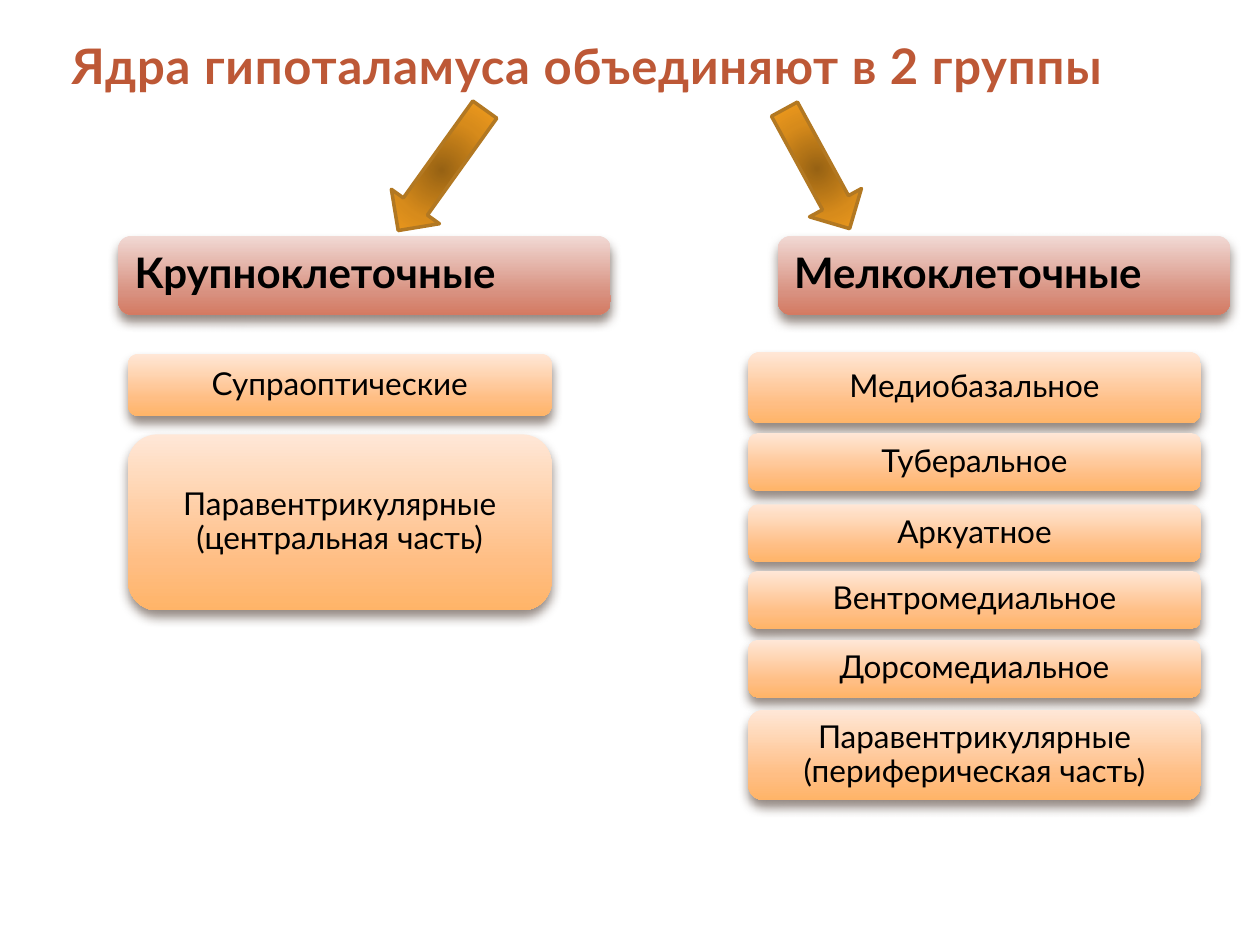
import copy
from dataclasses import dataclass

import pptx
import pptx.dml.color
import pptx.enum.shapes
import pptx.enum.text
import pptx.oxml
import pptx.oxml.ns
import pptx.util

Pt = pptx.util.Pt
RGB = pptx.dml.color.RGBColor
Kind = pptx.enum.shapes.MSO_SHAPE
Align = pptx.enum.text.PP_ALIGN
Anchor = pptx.enum.text.MSO_ANCHOR

FONT = "Lato"
BLACK = RGB(0x00, 0x00, 0x00)
RUST = RGB(0xBD, 0x58, 0x36)
BROWN = RGB(0xB2, 0x78, 0x22)
SHADE = RGB(0x4E, 0x3B, 0x30)
GOLD = ((0, RGB(0x97, 0x62, 0x13)), (0.5, RGB(0xD7, 0x8B, 0x1B)), (1, RGB(0xFF, 0xA5, 0x1F)))
ROSE = ((0, RGB(0xF1, 0xD9, 0xD4)), (0.72, RGB(0xD8, 0x91, 0x80)), (1, RGB(0xD4, 0x7A, 0x62)))
PEACH = ((0, RGB(0xFF, 0xE7, 0xD7)), (0.72, RGB(0xFF, 0xBE, 0x84)), (1, RGB(0xFF, 0xB4, 0x68)))

XMLNS = pptx.oxml.ns.nsdecls("a")
ROUND = (
    f'<a:path {XMLNS} path="circle">'
    '<a:fillToRect l="50000" t="50000" r="50000" b="50000"/></a:path>'
)
GLOW = (
    f'<a:effectLst {XMLNS}><a:outerShdw blurRad="{Pt(6)}" dist="{Pt(4)}" dir="5400000" '
    f'rotWithShape="0"><a:srgbClr val="{SHADE}"><a:alpha val="60000"/></a:srgbClr>'
    "</a:outerShdw></a:effectLst>"
)


@dataclass
class Arrow:
    left: float
    top: float
    width: float
    height: float
    turn: float


@dataclass
class Box:
    text: str
    top: float
    height: float


@dataclass
class Group:
    head: str
    edge: float
    span: float
    left: float
    width: float
    rows: list[Box]


ARROWS = [
    Arrow(450, 57.6, 33.8, 77.8, 331.4),
    Arrow(235.4, 54.7, 33.8, 85, 35.6),
]
GROUPS = [
    Group("Крупноклеточные", 67.6, 281.4, 73.2, 242, [
        Box("Супраоптические", 202.2, 35.5),
        Box("Паравентрикулярные (центральная часть)", 248.2, 100.6),
    ]),
    Group("Мелкоклеточные", 444.5, 258.5, 427.6, 258.6, [
        Box("Медиобазальное", 201, 41),
        Box("Туберальное", 247.5, 33),
        Box("Аркуатное", 288.2, 33),
        Box("Вентромедиальное", 326.2, 33),
        Box("Дорсомедиальное", 365.6, 33),
        Box("Паравентрикулярные (периферическая часть)", 405.6, 51.6),
    ]),
]


def write(frame, text: str, *, size: float, color=BLACK, bold=False, align=Align.LEFT,
          anchor=Anchor.MIDDLE, side=7.2, edge=3.6, line=0.9, track=0) -> None:
    frame.word_wrap = True
    frame.vertical_anchor = anchor
    frame.margin_left = frame.margin_right = Pt(side)
    frame.margin_top = frame.margin_bottom = Pt(edge)
    para = frame.paragraphs[0]
    para.alignment = align
    para.line_spacing = line
    run = para.add_run()
    run.text = text
    run.font.name = FONT
    run.font.size = Pt(size)
    run.font.bold = bold
    run.font.color.rgb = color
    if track:
        run.font._element.set("spc", str(int(track * 100)))


def blend(shape, stops: tuple, ring: bool = False) -> None:
    fill = shape.fill
    fill.gradient()
    fill.gradient_angle = 270
    grad = shape._element.spPr.find(pptx.oxml.ns.qn("a:gradFill"))
    marks = grad.find(pptx.oxml.ns.qn("a:gsLst"))
    marks.append(copy.deepcopy(marks[0]))
    for stop, (place, color) in zip(fill.gradient_stops, stops):
        stop.position = place
        stop.color.rgb = color
    if ring:
        grad.replace(grad.find(pptx.oxml.ns.qn("a:lin")), pptx.oxml.parse_xml(ROUND))


def point(slide, arrow: Arrow) -> None:
    shape = slide.shapes.add_shape(
        Kind.DOWN_ARROW, Pt(arrow.left), Pt(arrow.top), Pt(arrow.width), Pt(arrow.height))
    shape.rotation = arrow.turn
    blend(shape, GOLD, ring=True)
    shape.line.color.rgb = BROWN
    shape.line.width = Pt(2)
    shape.shadow.inherit = False


def panel(slide, box: Box, left: float, width: float, stops: tuple, **form) -> None:
    shape = slide.shapes.add_shape(
        Kind.ROUNDED_RECTANGLE, Pt(left), Pt(box.top), Pt(width), Pt(box.height))
    blend(shape, stops)
    shape.line.fill.background()
    shape._element.spPr.append(pptx.oxml.parse_xml(GLOW))
    write(shape.text_frame, box.text, **form)


def main() -> None:
    deck = pptx.Presentation()
    deck.slide_width, deck.slide_height = Pt(720), Pt(540)
    slide = deck.slides.add_slide(deck.slide_layouts[5])
    title = slide.shapes.title
    title.left, title.top, title.width, title.height = Pt(33.8), Pt(16.6), Pt(646.6), Pt(41)
    write(title.text_frame, "Ядра гипоталамуса объединяют в 2 группы", size=28, color=RUST,
          bold=True, anchor=Anchor.TOP, line=1, track=0.5)
    for arrow in ARROWS:
        point(slide, arrow)
    for group in GROUPS:
        panel(slide, Box(group.head, 134.8, 45), group.edge, group.span, ROSE,
              size=24, bold=True, side=7.2, edge=7.2)
        for row in group.rows:
            panel(slide, row, group.left, group.width, PEACH,
                  size=18, align=Align.CENTER, side=5, edge=5)
    deck.save("out.pptx")


if __name__ == "__main__":
    main()
